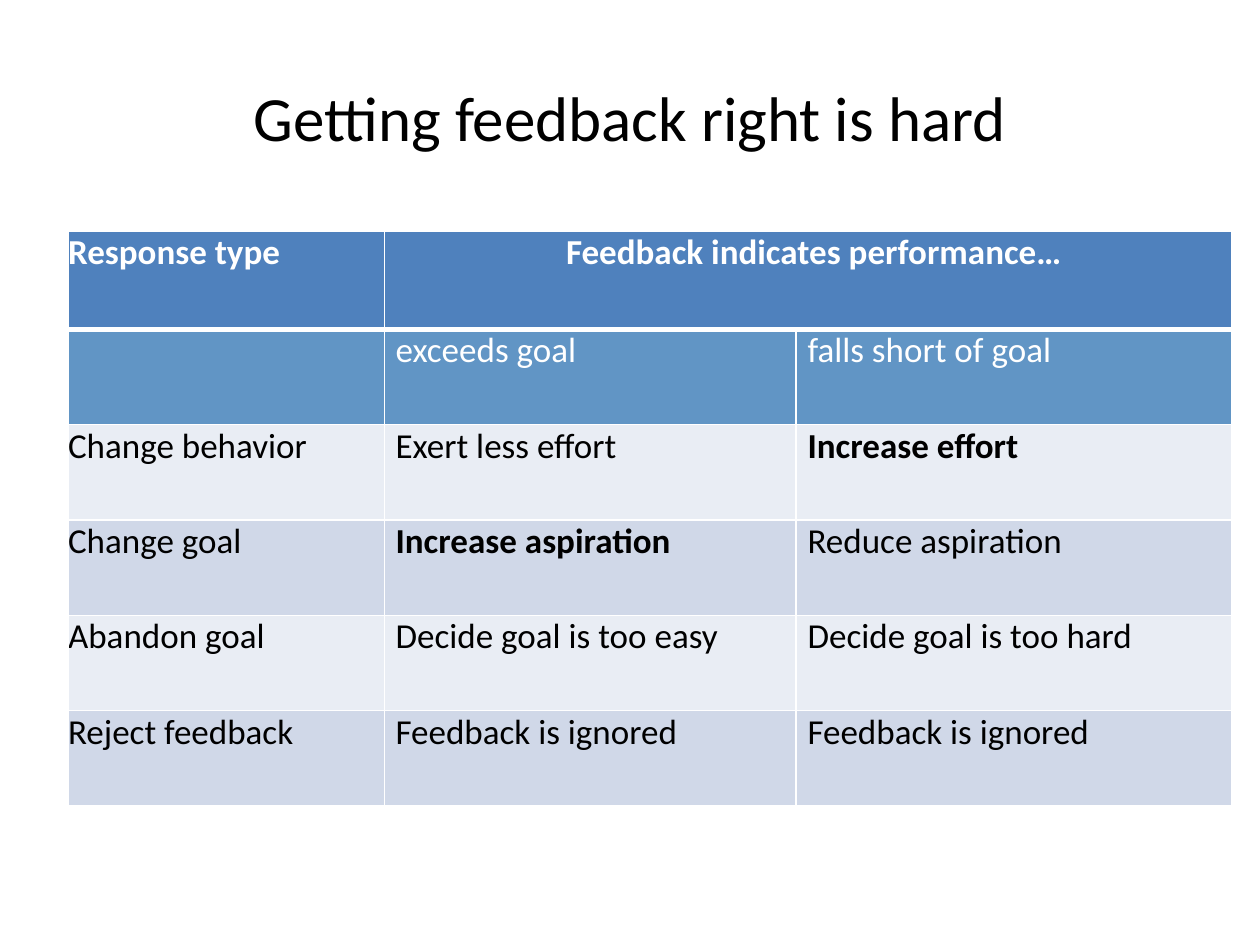
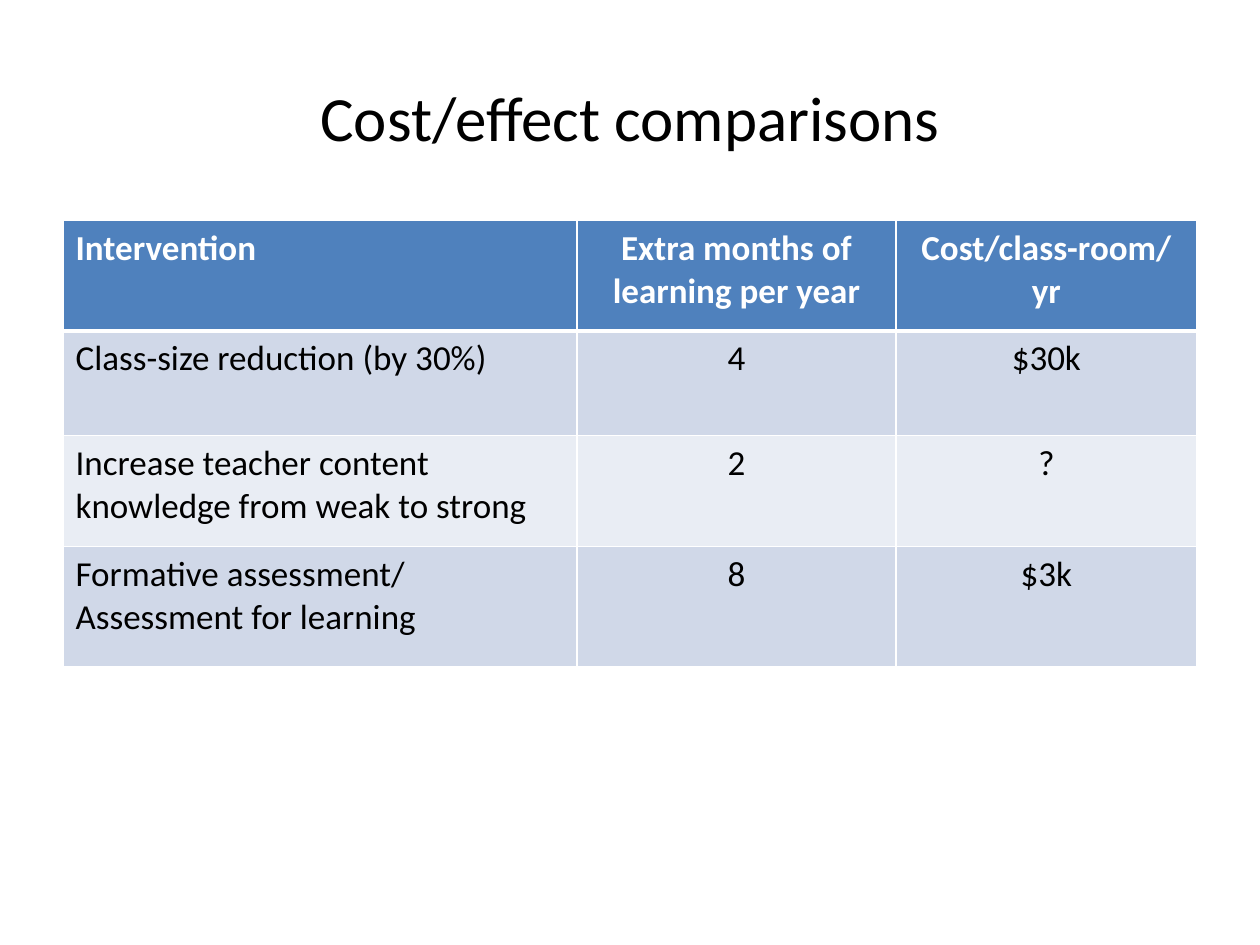
"""Build two slides with tables on feedback responses and intervention costs."""
from lxml.etree import SubElement
from pptx import Presentation
from pptx.dml.color import RGBColor
from pptx.enum.text import MSO_ANCHOR as Anchor, PP_ALIGN as Align
from pptx.oxml.ns import qn
from pptx.util import Pt

BLACK = RGBColor(0x00, 0x00, 0x00)
WHITE = RGBColor(0xFF, 0xFF, 0xFF)
HEADER = RGBColor(0x4F, 0x81, 0xBD)
SUBHEADER = RGBColor(0x61, 0x95, 0xC5)
LIGHT = RGBColor(0xE9, 0xED, 0xF4)
DARK = RGBColor(0xD0, 0xD8, 0xE8)


class Deck:
    FONT = "Calibri"
    TITLE_SIZE = Pt(36)
    CELL_SIZE = Pt(20)
    TITLE_BOX = dict(left=Pt(36), top=Pt(21.6), width=Pt(648), height=Pt(90))

    def __init__(self):
        self.prs = Presentation()
        self.prs.slide_width, self.prs.slide_height = Pt(720), Pt(540)
        self.slide = None

    @staticmethod
    def apply(target, values):
        for name, value in values.items():
            setattr(target, name, value)

    def style_text(self, frame, size, color, bold=False, **paragraph_format):
        for paragraph in frame.paragraphs:
            self.apply(paragraph, paragraph_format)
            for run in paragraph.runs:
                self.apply(run.font, dict(name=self.FONT, size=size, bold=bold))
                run.font.color.rgb = color

    def add_slide(self, heading):
        self.slide = self.prs.slides.add_slide(self.prs.slide_layouts[5])
        title = self.slide.shapes.title
        self.apply(title, self.TITLE_BOX)
        title.text_frame.text = heading
        title.text_frame.vertical_anchor = Anchor.MIDDLE
        self.style_text(title.text_frame, self.TITLE_SIZE, BLACK, alignment=Align.CENTER)

    def add_borders(self, cell, top, bottom):
        properties = cell._tc.get_or_add_tcPr()
        for side, width in dict(lnL=1, lnR=1, lnT=top, lnB=bottom).items():
            line = SubElement(properties, qn(f"a:{side}"), w=str(Pt(width)))
            fill = SubElement(line, qn("a:solidFill"))
            SubElement(fill, qn("a:srgbClr"), val=str(WHITE))

    def add_table(self, left, top, widths, heights, rows, fills):
        table = self.slide.shapes.add_table(
            len(rows), len(widths), Pt(left), Pt(top), Pt(sum(widths)), Pt(sum(heights))
        ).table
        self.apply(table, dict(first_row=False, horz_banding=False))
        for column, width in zip(table.columns, widths):
            column.width = Pt(width)
        for row, height in zip(table.rows, heights):
            row.height = Pt(height)
        for r, (texts, fill) in enumerate(zip(rows, fills)):
            for c, text in enumerate(texts):
                cell = table.cell(r, c)
                cell.text = text
                self.add_borders(cell, 3 if r == 1 else 1, 3 if r == 0 else 1)
                cell.fill.solid()
                cell.fill.fore_color.rgb = fill
        return table

    def style_cell(self, cell, margins, color, bold, **paragraph_format):
        self.apply(cell, margins)
        self.style_text(cell.text_frame, self.CELL_SIZE, color, bold, **paragraph_format)


def add_feedback_slide(deck):
    deck.add_slide("Getting feedback right is hard")
    responses = [
        ("Response type", "Feedback indicates performance…", ""),
        ("", "exceeds goal", "falls short of goal"),
        ("Change behavior", "Exert less effort", "Increase effort"),
        ("Change goal", "Increase aspiration", "Reduce aspiration"),
        ("Abandon goal", "Decide goal is too easy", "Decide goal is too hard"),
        ("Reject feedback", "Feedback is ignored", "Feedback is ignored"),
    ]
    best_responses = {"Increase effort", "Increase aspiration"}
    table = deck.add_table(
        38.9, 132, [180.7, 235.4, 249.1], [56.2] + [54.5] * 5, responses,
        [HEADER, SUBHEADER] + [LIGHT, DARK] * 2,
    )
    table.cell(0, 1).merge(table.cell(0, 2))
    for r, texts in enumerate(responses):
        for c, text in enumerate(texts):
            margins = dict(margin_left=Pt(6.5 if c else 0), margin_top=0,
                           margin_right=0, margin_bottom=0)
            deck.style_cell(
                table.cell(r, c), margins, WHITE if r < 2 else BLACK,
                r == 0 or text in best_responses, space_after=Pt(4),
                alignment=Align.CENTER if r == 0 and c else Align.LEFT,
            )


def add_cost_slide(deck):
    deck.add_slide("Cost/effect comparisons")
    interventions = [
        ("Intervention", "Extra months of learning per year", "Cost/class-room/yr"),
        ("Class-size reduction (by 30%)", "4", "$30k"),
        ("Increase teacher content knowledge from weak to strong", "2", "?"),
        ("Formative assessment/\nAssessment for learning", "8", "$3k"),
    ]
    table = deck.add_table(
        36, 126, [293.8, 182.2, 172], [63.2, 59.8, 63.4, 68.4], interventions,
        [HEADER, DARK, LIGHT, DARK],
    )
    margins = dict(margin_left=Pt(7.2), margin_top=Pt(3.6),
                   margin_right=Pt(7.2), margin_bottom=Pt(3.6))
    for r, texts in enumerate(interventions):
        for c in range(len(texts)):
            deck.style_cell(
                table.cell(r, c), margins, BLACK if r else WHITE, r == 0,
                alignment=Align.CENTER if c else Align.LEFT,
            )


def main():
    deck = Deck()
    add_feedback_slide(deck)
    add_cost_slide(deck)
    deck.prs.save("out.pptx")


if __name__ == "__main__":
    main()
